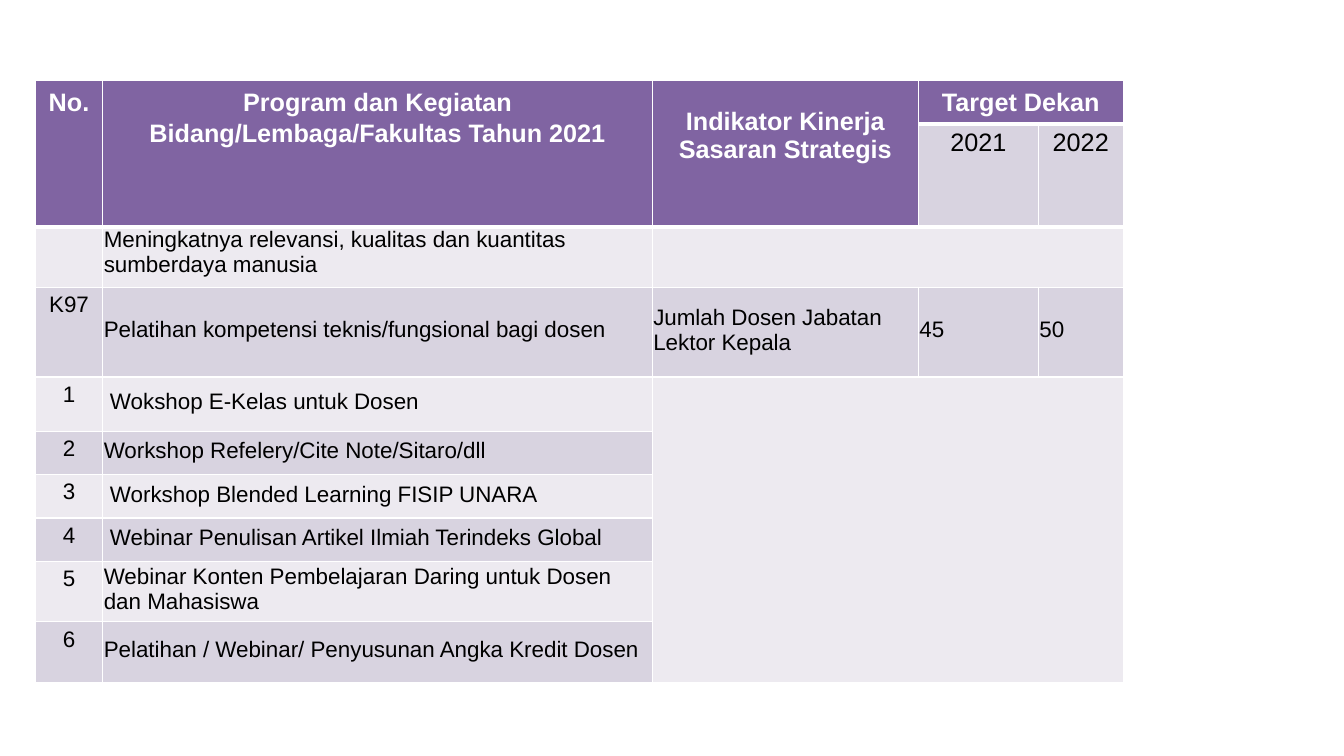
from dataclasses import dataclass

from pptx import Presentation
from pptx.dml.color import RGBColor as RGB
from pptx.enum.text import MSO_ANCHOR as ANCHOR, PP_ALIGN as ALIGN
from pptx.oxml.ns import qn
from pptx.util import Inches, Pt
from lxml.etree import SubElement


@dataclass(frozen=True)
class Theme:
    font: str = "Arial"
    header: str = "8064A2"
    dark_band: str = "D8D3E0"
    light_band: str = "EDEAF0"
    white: str = "FFFFFF"
    black: str = "000000"
    head_size: int = 18
    body_size: int = 16
    thin: int = 1
    thick: int = 3


THEME = Theme()

# Content
ROWS = [
    ("No.", "Program dan Kegiatan Bidang/Lembaga/Fakultas Tahun 2021",
     "Indikator Kinerja Sasaran Strategis", "Target Dekan", ""),
    ("", "", "", "2021", "2022"),
    ("", "Meningkatnya relevansi, kualitas dan kuantitas sumberdaya manusia", "", "", ""),
    ("K97", "Pelatihan kompetensi teknis/fungsional bagi dosen",
     "Jumlah Dosen Jabatan Lektor Kepala", "45", "50"),
    ("1", " Wokshop E-Kelas untuk Dosen", "", "", ""),
    ("2", "Workshop Refelery/Cite Note/Sitaro/dll", "", "", ""),
    ("3", " Workshop Blended Learning FISIP UNARA", "", "", ""),
    ("4", " Webinar Penulisan Artikel Ilmiah Terindeks Global", "", "", ""),
    ("5", "Webinar Konten Pembelajaran Daring untuk Dosen dan Mahasiswa", "", "", ""),
    ("6", "Pelatihan / Webinar/ Penyusunan Angka Kredit Dosen", "", "", ""),
]
# First and last cell of each merged block, as (row, column)
MERGES = [((0, 0), (1, 0)), ((0, 1), (1, 1)), ((0, 2), (1, 2)), ((0, 3), (0, 4)),
          ((2, 2), (2, 4)), ((4, 2), (9, 4))]

# Grid, in inches
LEFT, TOP = 0.35, 0.8
COLS = [0.67, 5.45, 2.64, 1.19, 0.84]
HEIGHTS = [0.43, 1.01, 0.6, 0.89, 0.54, 0.43, 0.43, 0.43, 0.6, 0.6]
WIDE_INSETS = (0.1, 0.05, 0.1, 0.05)
TIGHT_INSETS = (0.01, 0.01, 0.01, 0.05)
RAISED_INSETS = (0.1, 0.05, 0.1, 0.41)


def set_borders(cell, bottom):
    tcPr = cell._tc.get_or_add_tcPr()
    widths = {"a:lnL": THEME.thin, "a:lnR": THEME.thin, "a:lnT": THEME.thin, "a:lnB": bottom}
    for i, (tag, width) in enumerate(widths.items()):
        ln = SubElement(tcPr, qn(tag), w=str(Pt(width)))
        SubElement(SubElement(ln, qn("a:solidFill")), qn("a:srgbClr"), val=THEME.white)
        tcPr.insert(i, ln)


def style_cell(cell, row, col, text):
    is_header = row == 0 or (row == 1 and col < 3)
    is_centred = row < 2 or col == 0
    band = THEME.dark_band if row % 2 else THEME.light_band

    cell.fill.solid()
    cell.fill.fore_color.rgb = RGB.from_string(THEME.header if is_header else band)
    set_borders(cell, THEME.thick if is_header else THEME.thin)

    insets = WIDE_INSETS if is_centred else TIGHT_INSETS
    if (row, col) == (0, 2):
        insets = RAISED_INSETS
    (cell.margin_left, cell.margin_top,
     cell.margin_right, cell.margin_bottom) = map(Inches, insets)
    in_middle = (row == 0 and col >= 2) or (row >= 3 and col >= 1)
    cell.vertical_anchor = ANCHOR.MIDDLE if in_middle else ANCHOR.TOP

    if not text:
        return
    p = cell.text_frame.paragraphs[0]
    p.text = text
    p.alignment = ALIGN.CENTER if is_centred else ALIGN.LEFT
    if row == 0 and col < 2:
        p.line_spacing = 1.1
    font = p.runs[0].font
    font.name = THEME.font
    font.size = Pt(THEME.head_size if row < 2 else THEME.body_size)
    font.bold = is_header
    font.color.rgb = RGB.from_string(THEME.white if is_header else THEME.black)


def main():
    prs = Presentation()
    prs.slide_width, prs.slide_height = Inches(13.33), Inches(7.5)
    s = prs.slides.add_slide(prs.slide_layouts[6])

    # Table grid
    frame = s.shapes.add_table(len(ROWS), len(COLS), Inches(LEFT), Inches(TOP),
                               Inches(sum(COLS)), Inches(sum(HEIGHTS)))
    table = frame.table
    for column, width in zip(table.columns, COLS):
        column.width = Inches(width)
    for line, height in zip(table.rows, HEIGHTS):
        line.height = Inches(height)

    # Cells
    for row, texts in enumerate(ROWS):
        for col, text in enumerate(texts):
            style_cell(table.cell(row, col), row, col, text)
    for first, last in MERGES:
        table.cell(*first).merge(table.cell(*last))

    prs.save("out.pptx")


if __name__ == "__main__":
    main()
